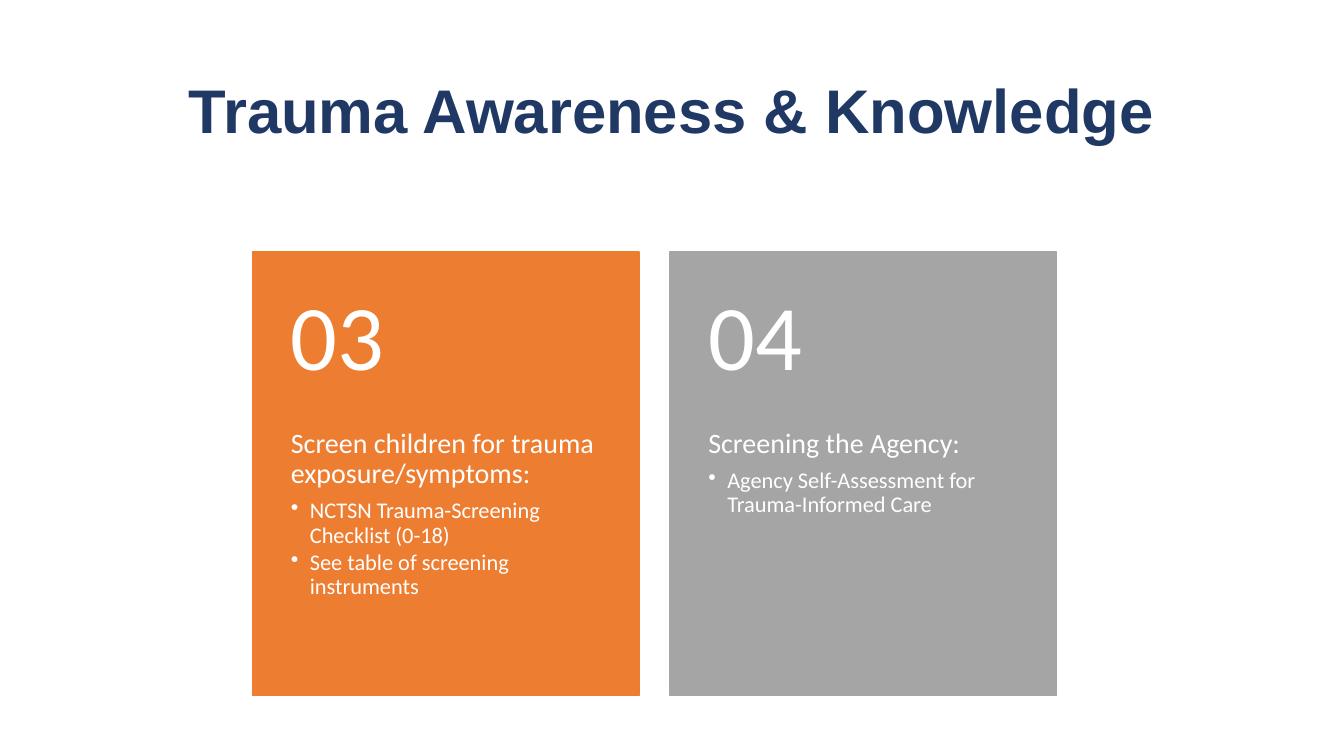
from dataclasses import dataclass

from lxml.etree import SubElement
from pptx import Presentation
from pptx.dml.color import RGBColor
from pptx.enum.shapes import MSO_SHAPE
from pptx.enum.text import MSO_ANCHOR, PP_ALIGN
from pptx.oxml.ns import qn
from pptx.slide import Slide
from pptx.text.text import TextFrame, _Paragraph
from pptx.util import Cm, Pt

CARD_LEFT, CARD_TOP = 6.37, 6.35
CARD_WIDTH, CARD_HEIGHT = 9.74, 11.18
CARD_PITCH = 10.52
NUMBER_HEIGHT = 4.47
SIDE_INSET = 0.96
BULLET_INDENT = 0.48
WHITE = "FFFFFF"


@dataclass(frozen=True)
class Card:
    number: str
    heading: str
    bullets: tuple[str, ...]
    color: str


CARDS = (
    Card(
        "03",
        "Screen children for trauma exposure/symptoms:",
        ("NCTSN Trauma-Screening Checklist (0-18)", "See table of screening instruments"),
        "ED7D31",
    ),
    Card(
        "04",
        "Screening the Agency:",
        ("Agency Self-Assessment for Trauma-Informed Care",),
        "A5A5A5",
    ),
)


def rgb(value: str) -> RGBColor:
    return RGBColor.from_string(value)


def add_text_area(
    slide: Slide, left: float, top: float, width: float, height: float,
    anchor: MSO_ANCHOR, insets: tuple[float, float, float],
) -> TextFrame:
    frame = slide.shapes.add_textbox(Cm(left), Cm(top), Cm(width), Cm(height)).text_frame
    side, upper, lower = insets
    frame.margin_left = frame.margin_right = Cm(side)
    frame.margin_top, frame.margin_bottom = Cm(upper), Cm(lower)
    frame.word_wrap = True
    frame.vertical_anchor = anchor
    return frame


def write(
    paragraph: _Paragraph, wording: str, size: float, color: str = WHITE,
    font_name: str = "Calibri", bold: bool = False, space_after: float = 0,
) -> None:
    paragraph.text = wording
    paragraph.line_spacing = 0.9
    paragraph.space_after = Pt(space_after)
    for run in paragraph.runs:
        run.font.size = Pt(size)
        run.font.name = font_name
        run.font.bold = bold
        run.font.color.rgb = rgb(color)


def add_bullet(frame: TextFrame, wording: str) -> None:
    paragraph = frame.add_paragraph()
    paragraph.level = 1
    write(paragraph, wording, 16, space_after=2.4)
    properties = paragraph._p.get_or_add_pPr()
    properties.set("marL", str(Cm(BULLET_INDENT)))
    properties.set("indent", str(-Cm(BULLET_INDENT)))
    SubElement(properties, qn("a:buChar")).set("char", "•")


def draw_card(slide: Slide, card: Card, left: float) -> None:
    panel = slide.shapes.add_shape(
        MSO_SHAPE.RECTANGLE, Cm(left), Cm(CARD_TOP), Cm(CARD_WIDTH), Cm(CARD_HEIGHT)
    )
    panel.shadow.inherit = False
    panel.fill.solid()
    panel.fill.fore_color.rgb = rgb(card.color)
    panel.line.color.rgb = rgb(card.color)
    panel.line.width = Pt(1)

    details = add_text_area(
        slide, left, CARD_TOP + NUMBER_HEIGHT, CARD_WIDTH, CARD_HEIGHT - NUMBER_HEIGHT,
        MSO_ANCHOR.TOP, (SIDE_INSET, 0, 0.91),
    )
    write(details.paragraphs[0], card.heading, 20, space_after=7)
    for bullet in card.bullets:
        add_bullet(details, bullet)

    number = add_text_area(
        slide, left, CARD_TOP, CARD_WIDTH, NUMBER_HEIGHT,
        MSO_ANCHOR.MIDDLE, (SIDE_INSET, 0.46, 0.46),
    )
    write(number.paragraphs[0], card.number, 66)


def main() -> None:
    presentation = Presentation()
    presentation.slide_width, presentation.slide_height = Cm(33.87), Cm(19.05)
    slide = presentation.slides.add_slide(presentation.slide_layouts[6])

    title = add_text_area(
        slide, 2.33, 1.01, 29.21, 3.68, MSO_ANCHOR.MIDDLE, (0.25, 0.13, 0.13)
    )
    heading = title.paragraphs[0]
    write(heading, "Trauma Awareness & Knowledge", 44, "203864", "Arial", bold=True)
    heading.alignment = PP_ALIGN.CENTER

    for position, card in enumerate(CARDS):
        draw_card(slide, card, CARD_LEFT + position * CARD_PITCH)

    presentation.save("out.pptx")


if __name__ == "__main__":
    main()
